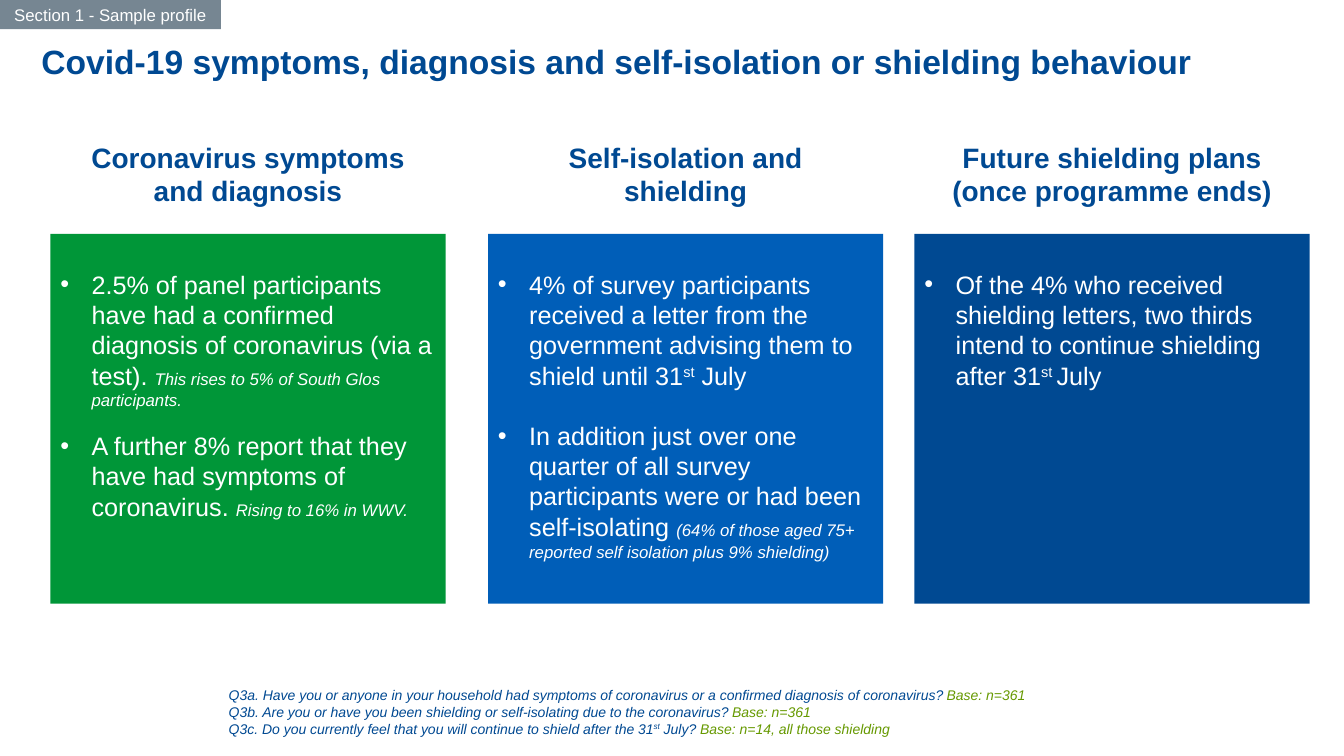
import pptx
import pptx.dml.color
import pptx.enum.shapes
import pptx.enum.text
import pptx.util
from pptx.util import Inches

NAVY, WHITE, GREEN_BASE = "004992", "FFFFFF", "669900"
ALIGN = pptx.enum.text.PP_ALIGN
ANCHOR = pptx.enum.text.MSO_ANCHOR
SMALL = {"size": 12, "italic": True}
SUPER = {"superscript": True}
BASE = {"color": GREEN_BASE}

COLUMNS = [
    (0.5, "009638", "Coronavirus symptoms and diagnosis", 14.4, [
        [("2.5% of panel participants have had a confirmed diagnosis of coronavirus (via a test). ", {}),
         ("This rises to 5% of South Glos participants.", SMALL)],
        [("A further 8% report that they have had symptoms of coronavirus. ", {}),
         ("Rising to 16% in WWV.", SMALL)],
    ]),
    (4.84, "005EB8", "Self-isolation and shielding", 21.6, [
        [("4% of survey participants received a letter from the government advising them to shield until 31", {}),
         ("st", SUPER), (" July", {})],
        [("In addition just over one quarter of all survey participants were or had been self-isolating ", {}),
         ("(64% of those aged 75+ reported self isolation plus 9% shielding)", SMALL)],
    ]),
    (9.07, NAVY, "Future shielding plans (once programme ends)", 0, [
        [("Of the 4% who received shielding letters, two thirds intend to continue shielding after 31", {}),
         ("st ", SUPER), ("July", {})],
    ]),
]

QUESTIONS = [
    [("Q3a. Have you or anyone in your household had symptoms of coronavirus "
      "or a confirmed diagnosis of coronavirus? ", {}), ("Base: n=361", BASE)],
    [("Q3b. Are you or have you been shielding or self-isolating due to the coronavirus? ", {}),
     ("Base: n=361", BASE)],
    [("Q3c. Do you currently feel that you will continue to shield after the 31", {}),
     ("st", SUPER), (" July? ", {}), ("Base: n=14, all those shielding", BASE)],
]


def rgb(hex_color):
    return pptx.dml.color.RGBColor.from_string(hex_color)


def add_run(paragraph, text, size=18, color=WHITE, bold=False, italic=False, superscript=False):
    run = paragraph.add_run()
    run.text = text
    font = run.font
    font.name, font.size = "Arial", pptx.util.Pt(size)
    font.bold, font.italic = bold, italic
    font.color.rgb = rgb(color)
    if superscript:
        run._r.get_or_add_rPr().set("baseline", "30000")


def add_bullet(paragraph, indent=0.31):
    properties = paragraph._p.get_or_add_pPr()
    properties.set("marL", str(Inches(indent)))
    properties.set("indent", str(-Inches(indent)))
    namespace = pptx.oxml.ns.qn
    font = pptx.oxml.xmlchemy.OxmlElement("a:buFont")
    font.set("typeface", "Arial")
    mark = pptx.oxml.xmlchemy.OxmlElement("a:buChar")
    mark.set("char", "•")
    properties.extend([font, mark])


def write(shape, paragraphs, align=ALIGN.LEFT, anchor=ANCHOR.TOP, top_inset=0.05,
          side_inset=0.1, gap=0, bullets=False, **style):
    frame = shape.text_frame
    frame.word_wrap = True
    frame.auto_size = pptx.enum.text.MSO_AUTO_SIZE.NONE
    frame.vertical_anchor = anchor
    frame.margin_left = frame.margin_right = Inches(side_inset)
    frame.margin_top, frame.margin_bottom = Inches(top_inset), Inches(0.05)
    for index, runs in enumerate(paragraphs):
        paragraph = frame.add_paragraph() if index else frame.paragraphs[0]
        if bullets:
            add_bullet(paragraph)
        paragraph.alignment = align
        paragraph.space_before = pptx.util.Pt(gap if index else 0)
        for text, changes in runs:
            add_run(paragraph, text, **{**style, **changes})


def add_panel(slide, left, top, width, height, fill):
    panel = slide.shapes.add_shape(pptx.enum.shapes.MSO_SHAPE.RECTANGLE, Inches(left),
                                   Inches(top), Inches(width), Inches(height))
    panel.shadow.inherit = False
    panel.fill.solid()
    panel.fill.fore_color.rgb = rgb(fill)
    panel.line.fill.background()
    return panel


def add_label(slide, left, top, width, height, paragraphs, **style):
    label = slide.shapes.add_textbox(Inches(left), Inches(top), Inches(width), Inches(height))
    write(label, paragraphs, color=NAVY, **style)


def add_title(slide, text):
    title = slide.shapes.title
    title.left, title.top = Inches(0.17), Inches(0.4)
    title.width, title.height = Inches(12.84), Inches(0.94)
    write(title, [[(text, {})]], side_inset=0.24, size=24, color=NAVY, bold=True)
    title.text_frame.paragraphs[0].line_spacing = 0.9


def main():
    deck = pptx.Presentation()
    deck.slide_width, deck.slide_height = Inches(13.33), Inches(7.5)
    slide = deck.slides.add_slide(deck.slide_layouts.get_by_name("Title Only"))
    add_title(slide, "Covid-19 symptoms, diagnosis and self-isolation or shielding behaviour")

    for left, fill, heading, gap, findings in COLUMNS:
        card = add_panel(slide, left, 2.32, 3.92, 3.67, fill)
        write(card, findings, top_inset=0.35, gap=gap, bullets=True)
        add_label(slide, left + 0.15, 1.34, 3.62, 0.77, [[(heading, {})]],
                  align=ALIGN.CENTER, size=20, bold=True)

    add_label(slide, 2.17, 6.76, 9.58, 0.61, QUESTIONS, size=10, italic=True)
    section = add_panel(slide, 0, 0, 2.19, 0.29, "768692")
    write(section, [[("Section 1 - Sample profile", {})]], align=ALIGN.CENTER,
          anchor=ANCHOR.MIDDLE, size=12)
    deck.save("out.pptx")


if __name__ == "__main__":
    main()
